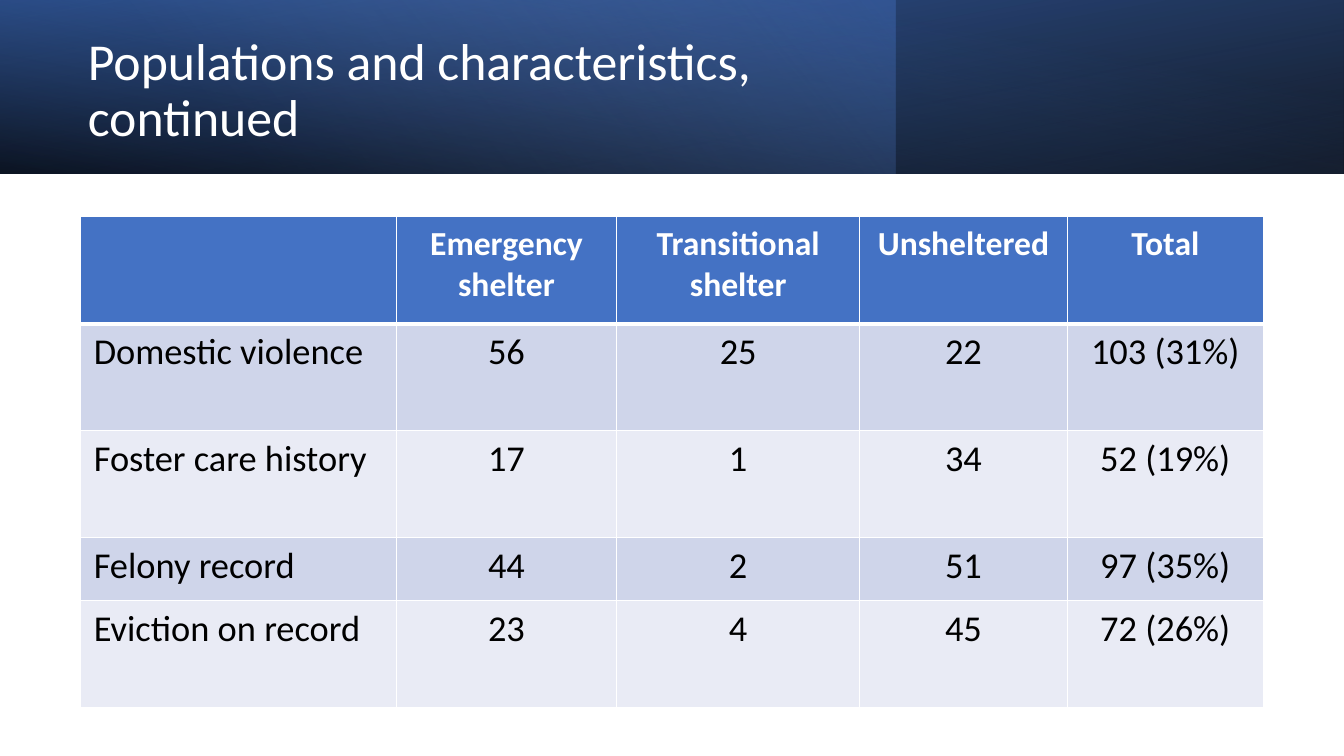
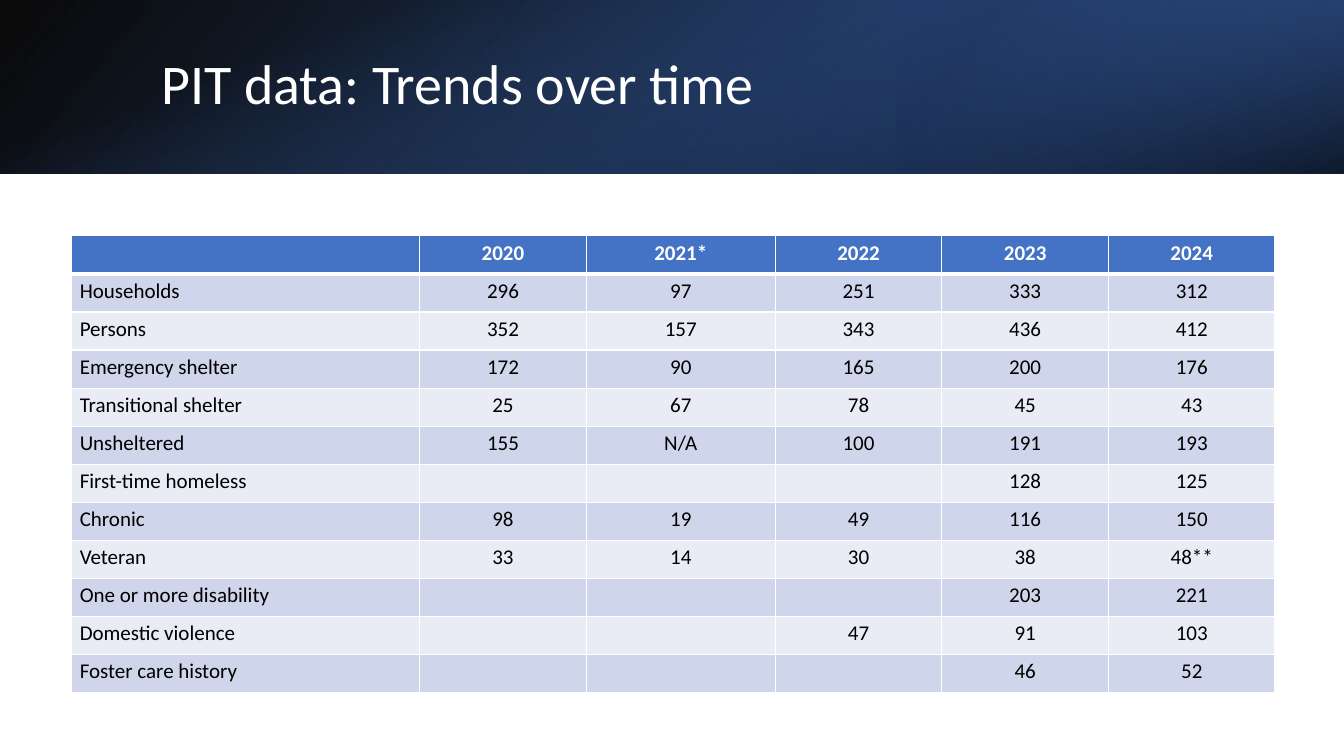
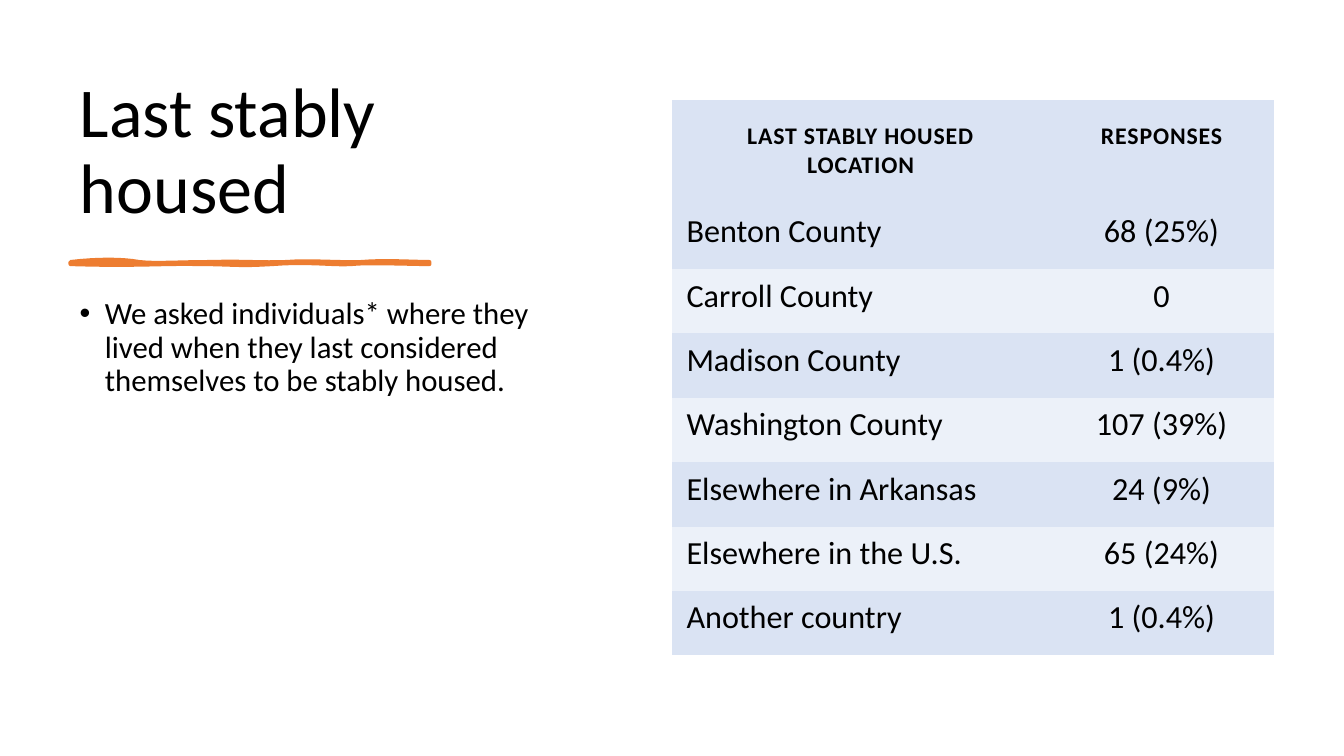
from dataclasses import dataclass

from lxml import etree
from pptx import Presentation
from pptx.dml.color import RGBColor
from pptx.enum.shapes import MSO_SHAPE
from pptx.enum.text import MSO_ANCHOR, MSO_AUTO_SIZE, PP_ALIGN
from pptx.oxml.ns import qn
from pptx.util import Pt

RECTANGLE = MSO_SHAPE.RECTANGLE
LEFT, CENTER = PP_ALIGN.LEFT, PP_ALIGN.CENTER
TOP, MIDDLE, BOTTOM = MSO_ANCHOR.TOP, MSO_ANCHOR.MIDDLE, MSO_ANCHOR.BOTTOM
NO_FIT = MSO_AUTO_SIZE.NONE

FONT = "Calibri"
WHITE = RGBColor(0xFF, 0xFF, 0xFF)
BLACK = RGBColor(0x00, 0x00, 0x00)
BLUE = RGBColor(0x44, 0x72, 0xC4)
DEEP_BLUE = RGBColor(0x2F, 0x55, 0x97)
NAVY = RGBColor(0x20, 0x38, 0x64)
SKY = RGBColor(0x8F, 0xAA, 0xDC)
ROW_DARK = RGBColor(0xCF, 0xD5, 0xEA)
ROW_LIGHT = RGBColor(0xE9, 0xEB, 0xF5)
PALE = RGBColor(0xDA, 0xE3, 0xF3)
PALER = RGBColor(0xEC, 0xF1, 0xF9)
ORANGE = RGBColor(0xED, 0x7D, 0x31)

WIDTH, HEIGHT, BAND = 960, 540, 124
BAND_BOX = (0, 0, WIDTH, BAND)
LAYOUT_CONTENT, LAYOUT_TITLE = 1, 5
NO_TABLE_STYLE = "{2D5ABB26-0587-4C30-8999-92F81FD0307C}"


@dataclass
class TableLook:
    head_size: float
    body_size: float
    head_margins: tuple  # left, top, right, bottom
    body_margins: tuple
    head_fill: RGBColor = BLUE
    head_color: RGBColor = WHITE
    row_fills: tuple = (ROW_DARK, ROW_LIGHT)
    ruled: bool = True
    head_spacing: int = 0  # hundredths of a point


WIDE_LOOK = TableLook(24, 26, (9.4, 4.7, 9.4, 4.7), (9.4, 4.7, 9.4, 4.7))
DENSE_LOOK = TableLook(15, 15, (6.2, 3.1, 6.2, 3.1), (6.2, 3.1, 6.2, 3.1))
PALE_LOOK = TableLook(17, 23, (15.8,) * 4, (10.4, 5.2, 10.4, 10.4), PALE, BLACK,
                      (PALE, PALER), False, 60)

POPULATIONS = [
    ("", "Emergency shelter", "Transitional shelter", "Unsheltered", "Total"),
    ("Domestic violence", "56", "25", "22", "103 (31%)"),
    ("Foster care history", "17", "1", "34", "52 (19%)"),
    ("Felony record", "44", "2", "51", "97 (35%)"),
    ("Eviction on record", "23", "4", "45", "72 (26%)"),
]
TRENDS = [
    ("", "2020", "2021*", "2022", "2023", "2024"),
    ("Households", "296", "97", "251", "333", "312"),
    ("Persons", "352", "157", "343", "436", "412"),
    ("Emergency shelter", "172", "90", "165", "200", "176"),
    ("Transitional shelter", "25", "67", "78", "45", "43"),
    ("Unsheltered", "155", "N/A", "100", "191", "193"),
    ("First-time homeless", "", "", "", "128", "125"),
    ("Chronic", "98", "19", "49", "116", "150"),
    ("Veteran", "33", "14", "30", "38", "48**"),
    ("One or more disability", "", "", "", "203", "221"),
    ("Domestic violence", "", "", "47", "91", "103"),
    ("Foster care history", "", "", "", "46", "52"),
]
LOCATIONS = [
    ("LAST STABLY HOUSED LOCATION", "RESPONSES"),
    ("Benton County", "68 (25%)"),
    ("Carroll County", "0"),
    ("Madison County", "1 (0.4%)"),
    ("Washington County", "107 (39%)"),
    ("Elsewhere in Arkansas", "24 (9%)"),
    ("Elsewhere in the U.S.", "65 (24%)"),
    ("Another country", "1 (0.4%)"),
]

# Cubic curves around the brush stroke: two control points and an end point
BRUSH_CURVES = [
    ((19.4, -2.2), (36.7, -2.2), (49, 0)),
    ((61.2, 1.4), (77, 0), (100, 0)),
    ((123, -0.7), (136.8, 0.7), (154, 0)),
    ((171.4, -1.4), (193.7, 0.7), (208, 0)),
    ((222.5, -1.4), (246.2, 0), (256.3, 0)),
    ((256.3, 0), (256.3, 0.7), (256.3, 1.4)),
    ((243.4, 1.4), (211.7, 0), (200.2, 1.4)),
    ((188.6, 2.2), (168.5, -0.7), (144, 1.4)),
    ((118.8, 2.9), (115.9, 1.4), (92.9, 1.4)),
    ((69.1, 0.7), (44.6, 2.9), (0, 1.4)),
]


def points(lengths):
    return [Pt(length) for length in lengths]


def style_font(font, size, color, bold=False):
    font.name, font.size, font.bold = FONT, Pt(size), bold
    font.color.rgb = color


def fill_placeholder(holder, box, text, size, color, anchor):
    holder.left, holder.top, holder.width, holder.height = points(box)
    frame = holder.text_frame
    frame.text = text
    frame.word_wrap, frame.auto_size = True, NO_FIT
    frame.vertical_anchor = anchor
    para = frame.paragraphs[0]
    para.alignment, para.line_spacing = LEFT, 0.9
    style_font(para.font, size, color)
    return para


def add_gradient(slide, box, stops, angle, rotation=0, flip=False):
    """Each stop is position, colour and opacity, in percent."""
    shape = slide.shapes.add_shape(RECTANGLE, *points(box))
    shape.shadow.inherit = False
    shape.line.fill.background()
    shape.rotation = rotation
    if flip:
        shape.element.spPr.find(qn("a:xfrm")).set("flipH", "1")
    shape.fill.gradient()
    gradient = shape.element.spPr.find(qn("a:gradFill"))
    stop_list = gradient.find(qn("a:gsLst"))
    for old_stop in list(stop_list):
        stop_list.remove(old_stop)
    for position, color, opacity in stops:
        stop = etree.SubElement(stop_list, qn("a:gs"), pos=str(position * 1000))
        tint = etree.SubElement(stop, qn("a:srgbClr"), val=str(color))
        etree.SubElement(tint, qn("a:alpha"), val=str(opacity * 1000))
    gradient.find(qn("a:lin")).set("ang", str(angle * 60000))


def add_borders(cell, row_index):
    properties = cell._tc.get_or_add_tcPr()
    thick_side = {0: "lnB", 1: "lnT"}.get(row_index)  # rule below the header
    for side in ("lnL", "lnR", "lnT", "lnB"):
        width = Pt(3 if side == thick_side else 1)
        border = etree.SubElement(properties, qn("a:" + side), w=str(width))
        solid = etree.SubElement(border, qn("a:solidFill"))
        etree.SubElement(solid, qn("a:srgbClr"), val=str(WHITE))


def fill_cell(cell, text, row_index, column_index, look):
    is_head = row_index == 0
    if look.ruled:
        add_borders(cell, row_index)
    cell.fill.solid()
    cell.fill.fore_color.rgb = (
        look.head_fill if is_head else look.row_fills[(row_index - 1) % 2])
    margins = look.head_margins if is_head else look.body_margins
    (cell.margin_left, cell.margin_top,
     cell.margin_right, cell.margin_bottom) = points(margins)
    para = cell.text_frame.paragraphs[0]
    para.alignment = CENTER if is_head or column_index else LEFT
    if is_head:
        style_font(para.font, look.head_size, look.head_color, True)
    else:
        style_font(para.font, look.body_size, BLACK)
    if text:
        span = para.add_run()
        span.text = text
        if is_head and look.head_spacing:
            span._r.get_or_add_rPr().set("spc", str(look.head_spacing))


def add_data_table(slide, corner, widths, heights, rows, look):
    box = (*corner, sum(widths), sum(heights))
    frame = slide.shapes.add_table(len(rows), len(widths), *points(box))
    for style in frame.element.iter(qn("a:tableStyleId")):
        style.text = NO_TABLE_STYLE
    table = frame.table
    for column, width in zip(table.columns, widths):
        column.width = Pt(width)
    for row_index, (height, texts) in enumerate(zip(heights, rows)):
        table.rows[row_index].height = Pt(height)
        for column_index, text in enumerate(texts):
            fill_cell(table.cell(row_index, column_index), text,
                      row_index, column_index, look)


def add_brush_stroke(slide, left, top):
    start, outline = (0, 0), []
    for first, second, end in BRUSH_CURVES:
        for step in range(1, 9):
            t = step / 8
            weights = ((1 - t) ** 3, 3 * t * (1 - t) ** 2, 3 * t * t * (1 - t), t ** 3)
            x, y = (sum(w * p[axis] for w, p in zip(weights, (start, first, second, end)))
                    for axis in (0, 1))
            outline.append((Pt(left + x), Pt(top + y)))
        start = end
    builder = slide.shapes.build_freeform(Pt(left), Pt(top))
    builder.add_line_segments(outline, close=True)
    stroke = builder.convert_to_shape()
    stroke.shadow.inherit = False
    stroke.fill.solid()
    stroke.fill.fore_color.rgb = ORANGE
    stroke.line.color.rgb = ORANGE
    stroke.line.width = Pt(3)


def add_banded_slide(deck, gradients, title, title_box, title_size):
    page = deck.slides.add_slide(deck.slide_layouts[LAYOUT_TITLE])
    for gradient in gradients:
        add_gradient(page, **gradient)
    heading = page.shapes.title
    fill_placeholder(heading, title_box, title, title_size, WHITE, MIDDLE)
    heading.element.getparent().append(heading.element)  # in front of the band
    return page


def build_populations(deck):
    gradients = [
        dict(box=BAND_BOX, stops=[(0, BLACK, 96), (100, DEEP_BLUE, 100)],
             angle=100, rotation=180, flip=True),
        dict(box=(0, 0, 640, BAND), stops=[(0, BLUE, 41), (74, SKY, 0)], angle=140),
        dict(box=BAND_BOX, stops=[(0, BLACK, 63), (78, BLUE, 15)], angle=260, flip=True),
    ]
    page = add_banded_slide(deck, gradients, "Populations and characteristics, continued",
                            (55.5, 19.5, 556, 91.5), 37)
    add_data_table(page, (57.6, 154.8), (225.4, 157.6, 173.5, 148.4, 140),
                   (76.4, 76.4, 76.4, 44.8, 76.4), POPULATIONS, WIDE_LOOK)


def build_trends(deck):
    middle = (WIDTH - BAND) / 2
    gradients = [
        dict(box=BAND_BOX, stops=[(0, BLACK, 96), (100, DEEP_BLUE, 100)],
             angle=140, flip=True),
        dict(box=(640, 0, 320, BAND), stops=[(19, NAVY, 68), (100, BLUE, 79)],
             angle=320, rotation=180, flip=True),
        # Turned a quarter, so it covers the whole band
        dict(box=(middle, -middle, BAND, WIDTH), stops=[(23, BLUE, 0), (99, BLACK, 74)],
             angle=340, rotation=90),
    ]
    page = add_banded_slide(deck, gradients, "PIT data: Trends over time",
                            (108, 27.4, 790.5, 69), 40)
    add_data_table(page, (50.8, 168.5), (249, 119, 135, 119, 119, 119),
                   [27.2] * len(TRENDS), TRENDS, DENSE_LOOK)


def build_last_housed(deck):
    page = deck.slides.add_slide(deck.slide_layouts[LAYOUT_CONTENT])
    fill_placeholder(page.shapes.title, (49.7, 50.4, 379.5, 116.6),
                     "Last stably housed", 50, BLACK, BOTTOM)
    add_brush_stroke(page, 50.4, 187.2)
    # Bulleted remark
    para = fill_placeholder(
        page.placeholders[1], (49.7, 209.5, 379.5, 279.4),
        "We asked individuals* where they lived when they last considered "
        "themselves to be stably housed.", 22, BLACK, TOP)
    para.space_before = Pt(10)
    properties = para._p.get_or_add_pPr()
    properties.set("marL", str(Pt(18)))
    properties.set("indent", str(-Pt(18)))
    add_data_table(page, (480, 71.5), (269.5, 160.5),
                   [74.7] + [46] * (len(LOCATIONS) - 1), LOCATIONS, PALE_LOOK)


def main():
    deck = Presentation()
    deck.slide_width, deck.slide_height = Pt(WIDTH), Pt(HEIGHT)
    build_populations(deck)
    build_trends(deck)
    build_last_housed(deck)
    deck.save("out.pptx")


if __name__ == "__main__":
    main()
